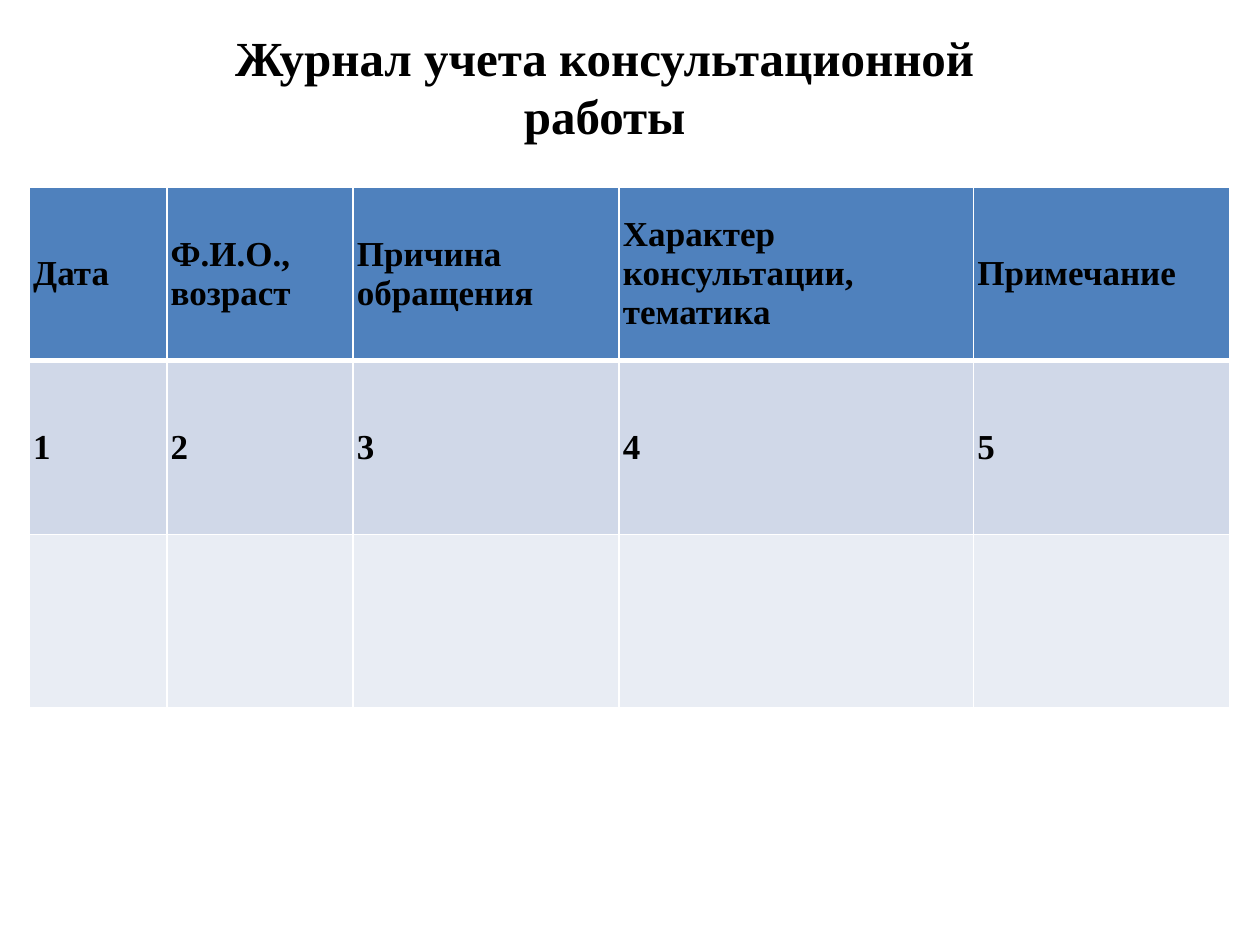
from lxml.etree import SubElement as Sub
from pptx import Presentation as Deck
from pptx.dml.color import RGBColor as Color
from pptx.enum.text import MSO_ANCHOR as Anchor, MSO_AUTO_SIZE as Fit, PP_ALIGN as Align
from pptx.oxml.ns import qn
from pptx.util import Pt

FONT = "Times New Roman"
COLS = [78.5, 106.5, 152, 202.5, 146.5]
ROW = 99.3
FILLS = ["4F81BD", "D0D8E8", "E9EDF4"]
ROWS = [
    ["Дата", "Ф.И.О., возраст", "Причина обращения",
     "Характер консультации, тематика", "Примечание"],
    ["1", "2", "3", "4", "5"],
    [""] * 5,
]


def paint(fill, tone):
    fill.solid()
    fill.fore_color.rgb = Color.from_string(tone)


def write(para, text, size):
    run = para.add_run()
    run.text = text
    font = run.font
    font.name, font.size, font.bold = FONT, Pt(size), True
    paint(font.fill, "000000")


def edge(cell, side, width):
    line = Sub(cell._tc.get_or_add_tcPr(), qn("a:ln" + side), w=str(Pt(width)))
    fill = Sub(line, qn("a:solidFill"))
    Sub(fill, qn("a:srgbClr"), val="FFFFFF")


def head(slide, text):
    title = slide.shapes.title
    title.left, title.top, title.width, title.height = Pt(106.5), Pt(0), Pt(478), Pt(50.4)
    frame = title.text_frame
    frame.word_wrap, frame.auto_size = True, Fit.NONE
    frame.vertical_anchor = Anchor.TOP
    frame.margin_top, frame.margin_bottom = Pt(16.4), Pt(0)
    para = frame.paragraphs[0]
    para.alignment, para.line_spacing = Align.CENTER, Pt(33)
    write(para, text, 28)


def fill_cell(cell, text, row):
    widths = {"L": 1, "R": 1, "T": 3 if row == 1 else 1, "B": 3 if row == 0 else 1}
    for side, width in widths.items():
        edge(cell, side, width)
    paint(cell.fill, FILLS[row])
    cell.vertical_anchor = Anchor.MIDDLE
    cell.margin_left = cell.margin_right = Pt(2.2)
    cell.margin_top = cell.margin_bottom = Pt(2.2)
    if text:
        write(cell.text_frame.paragraphs[0], text, 20)


def grid(slide):
    frame = slide.shapes.add_table(
        len(ROWS), len(COLS), Pt(16.8), Pt(106.8), Pt(sum(COLS)), Pt(ROW * len(ROWS)))
    table = frame.table
    for col, width in zip(table.columns, COLS):
        col.width = Pt(width)
    for r, texts in enumerate(ROWS):
        table.rows[r].height = Pt(ROW)
        for c, text in enumerate(texts):
            fill_cell(table.cell(r, c), text, r)


def main():
    deck = Deck()
    deck.slide_width, deck.slide_height = Pt(720), Pt(540)
    slide = deck.slides.add_slide(deck.slide_layouts[5])
    paint(slide.background.fill, "FFFFFF")
    head(slide, "Журнал учета консультационной работы")
    grid(slide)
    deck.save("out.pptx")


if __name__ == "__main__":
    main()
